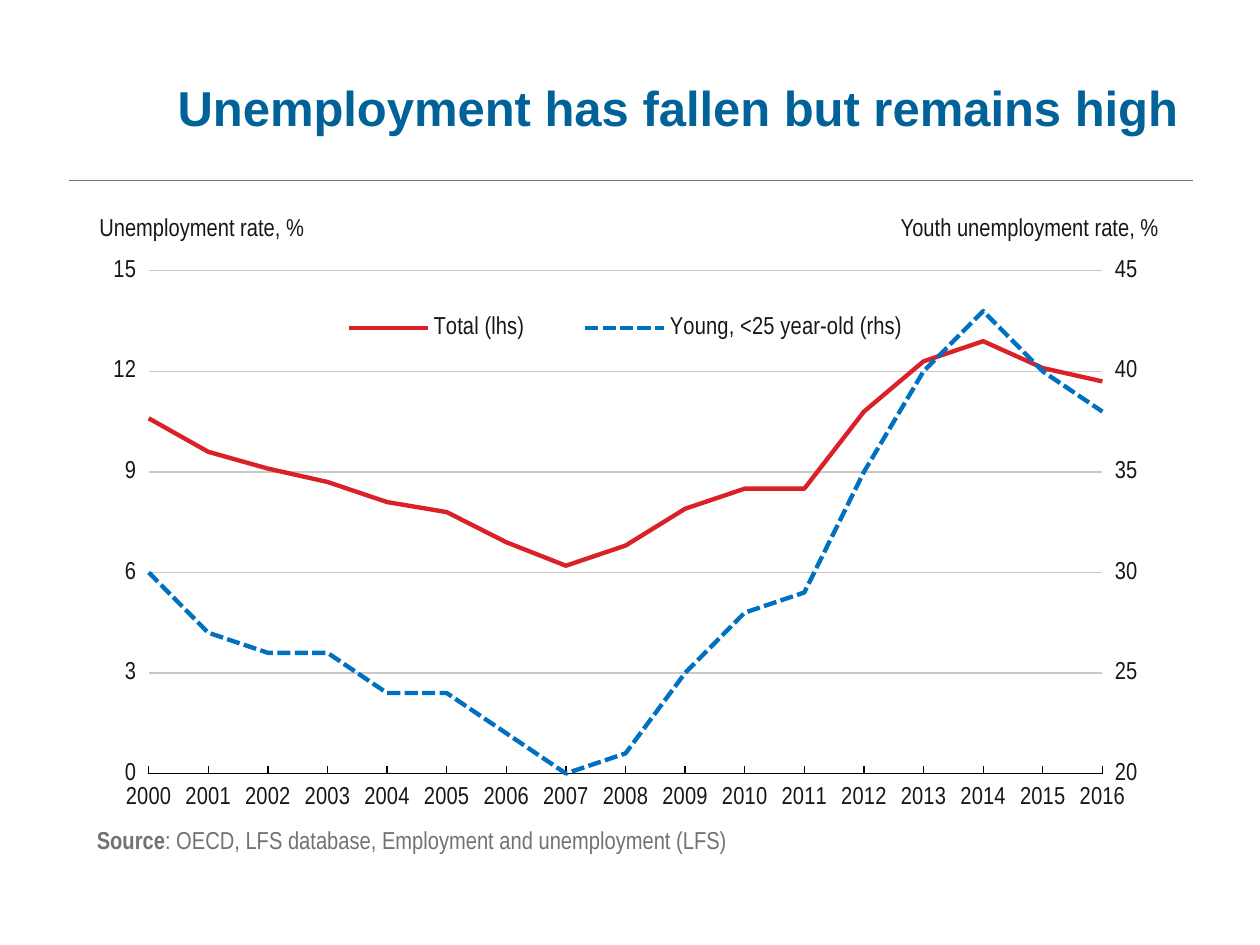
import copy

import pptx
import pptx.chart.data
import pptx.dml.color
import pptx.enum.chart
import pptx.enum.dml
import pptx.enum.text
import pptx.oxml
import pptx.oxml.ns
import pptx.util
from pptx.util import Inches

COLORS = {"title": "006299", "rule": "727272", "text": "171717", "grid": "C8C8C8",
          "axis": "000000", "plot": "FFFFFF", "total": "DA2128", "young": "0070C0"}
YEARS = [str(year) for year in range(2000, 2017)]
TOTAL_RATE = [10.6, 9.6, 9.1, 8.7, 8.1, 7.8, 6.9, 6.2, 6.8, 7.9, 8.5, 8.5,
              10.8, 12.3, 12.9, 12.1, 11.7]
YOUNG_RATE = [30, 27, 26, 26, 24, 24, 22, 20, 21, 25, 28, 29, 35, 40, 43, 40, 38]


def rgb(name):
    return pptx.dml.color.RGBColor.from_string(COLORS[name])


def add_text(paragraph, text, *, font="Arial Narrow", size=14, color="text", bold=False):
    run = paragraph.add_run()
    run.text = text
    run.font.name = font
    run.font.size = pptx.util.Pt(size)
    run.font.bold = bold
    run.font.color.rgb = rgb(color)


def chart_element(tag, **attributes):
    element = pptx.oxml.parse_xml(f"<c:{tag} {pptx.oxml.ns.nsdecls('c')}/>")
    for key, value in attributes.items():
        element.set(key, str(value))
    return element


def set_layout(parent, index, x, y, w, h, inner=False):
    """Give a plot area or legend a fixed place, in fractions of the chart."""
    for old in parent.xpath("c:layout"):
        parent.remove(old)
    layout = chart_element("layout")
    manual = chart_element("manualLayout")
    layout.append(manual)
    if inner:
        manual.append(chart_element("layoutTarget", val="inner"))
    for tag in ("xMode", "yMode"):
        manual.append(chart_element(tag, val="edge"))
    for tag, value in zip("xywh", (x, y, w, h)):
        manual.append(chart_element(tag, val=value))
    parent.insert(index, layout)


def start_on_axis(value_axis):
    """Put the first and last categories on the edges of the plot."""
    for old in value_axis.xpath("c:crossBetween"):
        value_axis.remove(old)
    value_axis.xpath("c:crosses")[0].addnext(chart_element("crossBetween", val="midCat"))


def move_to_right_axis(plot_area, low, high, step):
    """Plot the last series against a second value axis on the right."""
    left_plot = plot_area.xpath("c:lineChart")[0]
    category_axis = plot_area.xpath("c:catAx")[0]
    value_axis = plot_area.xpath("c:valAx")[0]
    right_plot, hidden_axis, right_axis = map(
        copy.deepcopy, (left_plot, category_axis, value_axis))

    left_plot.remove(left_plot.xpath("c:ser")[-1])
    right_plot.remove(right_plot.xpath("c:ser")[0])
    left_plot.addnext(right_plot)
    value_axis.addnext(hidden_axis)
    hidden_axis.addnext(right_axis)

    category_id, value_id = "50010", "50020"
    for element, new_id in zip(right_plot.xpath("c:axId"), (category_id, value_id)):
        element.set("val", new_id)
    right_axis.remove(right_axis.xpath("c:majorGridlines")[0])
    settings = [
        (hidden_axis, "c:axId", category_id), (hidden_axis, "c:crossAx", value_id),
        (hidden_axis, "c:delete", "1"),
        (right_axis, "c:axId", value_id), (right_axis, "c:crossAx", category_id),
        (right_axis, "c:axPos", "r"), (right_axis, "c:crosses", "max"),
        (right_axis, "c:scaling/c:min", low), (right_axis, "c:scaling/c:max", high),
        (right_axis, "c:majorUnit", step),
    ]
    for axis, query, value in settings:
        axis.xpath(query)[0].set("val", str(value))


class SlideBuilder:
    """Holds the chart style and the current slide."""
    font = "Arial Narrow"
    size = pptx.util.Pt(14)
    line_width = pptx.util.Pt(2.5)

    def __init__(self, slide):
        self.slide = slide

    def title(self, text, left, top, width, height):
        title = self.slide.shapes.title
        title.left, title.top = Inches(left), Inches(top)
        title.width, title.height = Inches(width), Inches(height)
        title.text_frame.vertical_anchor = pptx.enum.text.MSO_ANCHOR.MIDDLE
        paragraph = title.text_frame.paragraphs[0]
        paragraph.alignment = pptx.enum.text.PP_ALIGN.CENTER
        add_text(paragraph, text, font="Arial", size=28, color="title", bold=True)

    def rule(self, left, top, width):
        line = self.slide.shapes.add_connector(
            pptx.enum.shapes.MSO_CONNECTOR.STRAIGHT,
            Inches(left), Inches(top), Inches(left + width), Inches(top))
        line.line.color.rgb = rgb("rule")
        line.line.width = pptx.util.Pt(0.5)
        line._element.spPr.append(
            pptx.oxml.parse_xml(f"<a:effectLst {pptx.oxml.ns.nsdecls('a')}/>"))

    def label(self, left, top, width, height, wrap=False):
        """Add an empty text box and return its first paragraph."""
        box = self.slide.shapes.add_textbox(
            Inches(left), Inches(top), Inches(width), Inches(height))
        box.text_frame.word_wrap = wrap
        return box.text_frame.paragraphs[0]

    def line_chart(self, left, top, width, height):
        data = pptx.chart.data.CategoryChartData()
        data.categories = YEARS
        data.add_series("Total (lhs)", TOTAL_RATE)
        data.add_series("Young, <25 year-old (rhs)", YOUNG_RATE)
        chart = self.slide.shapes.add_chart(
            pptx.enum.chart.XL_CHART_TYPE.LINE,
            Inches(left), Inches(top), Inches(width), Inches(height), data).chart
        chart.has_title = False
        chart.font.name, chart.font.size = self.font, self.size
        chart.font.color.rgb = rgb("text")
        chart.plots[0].vary_by_categories = False
        self.style_series(chart)
        self.style_axes(chart)
        chart.has_legend = True
        chart.legend.position = pptx.enum.chart.XL_LEGEND_POSITION.RIGHT
        chart.legend.include_in_layout = True

        plot_area = chart.element.xpath("c:chart/c:plotArea")[0]
        start_on_axis(plot_area.xpath("c:valAx")[0])
        move_to_right_axis(plot_area, 20, 45, 5)
        set_layout(plot_area, 0, 0.051, 0.107, 0.898, 0.821, inner=True)
        set_layout(chart.element.xpath("c:chart/c:legend")[0], 1, 0.19, 0.16, 0.62, 0.08)

    def style_series(self, chart):
        dashes = (pptx.enum.dml.MSO_LINE.SOLID, pptx.enum.dml.MSO_LINE.SQUARE_DOT)
        for series, color, dash in zip(chart.series, ("total", "young"), dashes):
            series.smooth = False
            series.marker.style = pptx.enum.chart.XL_MARKER_STYLE.NONE
            series.format.line.color.rgb = rgb(color)
            series.format.line.width = self.line_width
            series.format.line.dash_style = dash

    def style_axes(self, chart):
        marks = pptx.enum.chart.XL_TICK_MARK
        years, rate = chart.category_axis, chart.value_axis
        years.tick_label_position = pptx.enum.chart.XL_TICK_LABEL_POSITION.LOW
        years.major_tick_mark = marks.INSIDE
        rate.minimum_scale, rate.maximum_scale, rate.major_unit = 0, 15, 3
        rate.major_tick_mark = marks.CROSS
        rate.tick_labels.number_format = "0"
        rate.tick_labels.number_format_is_linked = False
        rate.format.line.fill.background()
        rate.has_major_gridlines = True
        for line, color in ((years.format.line, "axis"),
                            (rate.major_gridlines.format.line, "grid")):
            line.color.rgb = rgb(color)
            line.width = pptx.util.Pt(0.75)


def main():
    deck = pptx.Presentation()
    deck.slide_width, deck.slide_height = Inches(10), Inches(7.5)
    builder = SlideBuilder(deck.slides.add_slide(deck.slide_layouts[5]))
    builder.rule(0.55, 1.43, 8.92)
    builder.title("Unemployment has fallen but remains high", 0.91, 0.29, 8.94, 1.12)

    source = builder.label(0.67, 6.5, 8.27, 0.34, wrap=True)
    add_text(source, "Source", color="rule", bold=True)
    add_text(source, ": OECD, LFS database, Employment and unemployment (LFS)", color="rule")
    add_text(builder.label(0.69, 1.63, 1.84, 0.34), "Unemployment rate, %")
    add_text(builder.label(7.05, 1.63, 2.35, 0.34), "Youth unemployment rate, %")
    builder.line_chart(0.75, 1.63, 8.43, 4.86)
    deck.save("out.pptx")


if __name__ == "__main__":
    main()
